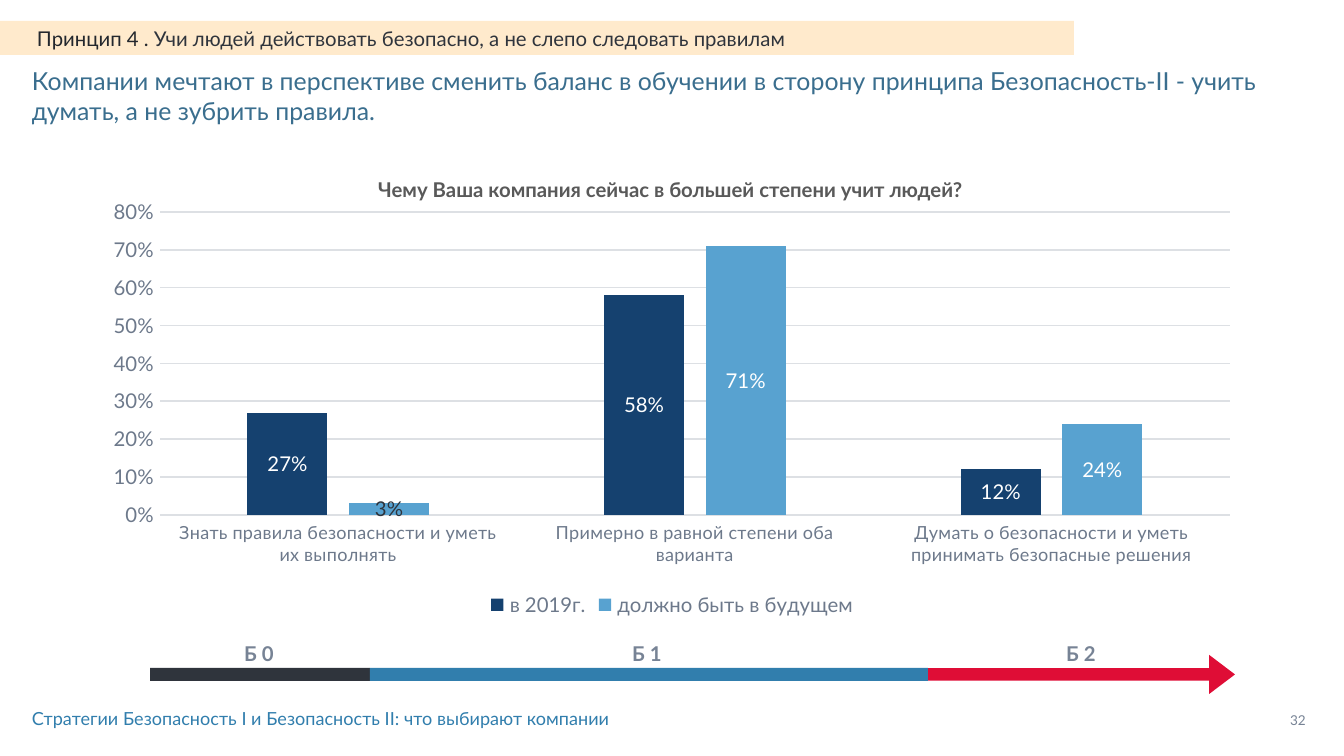
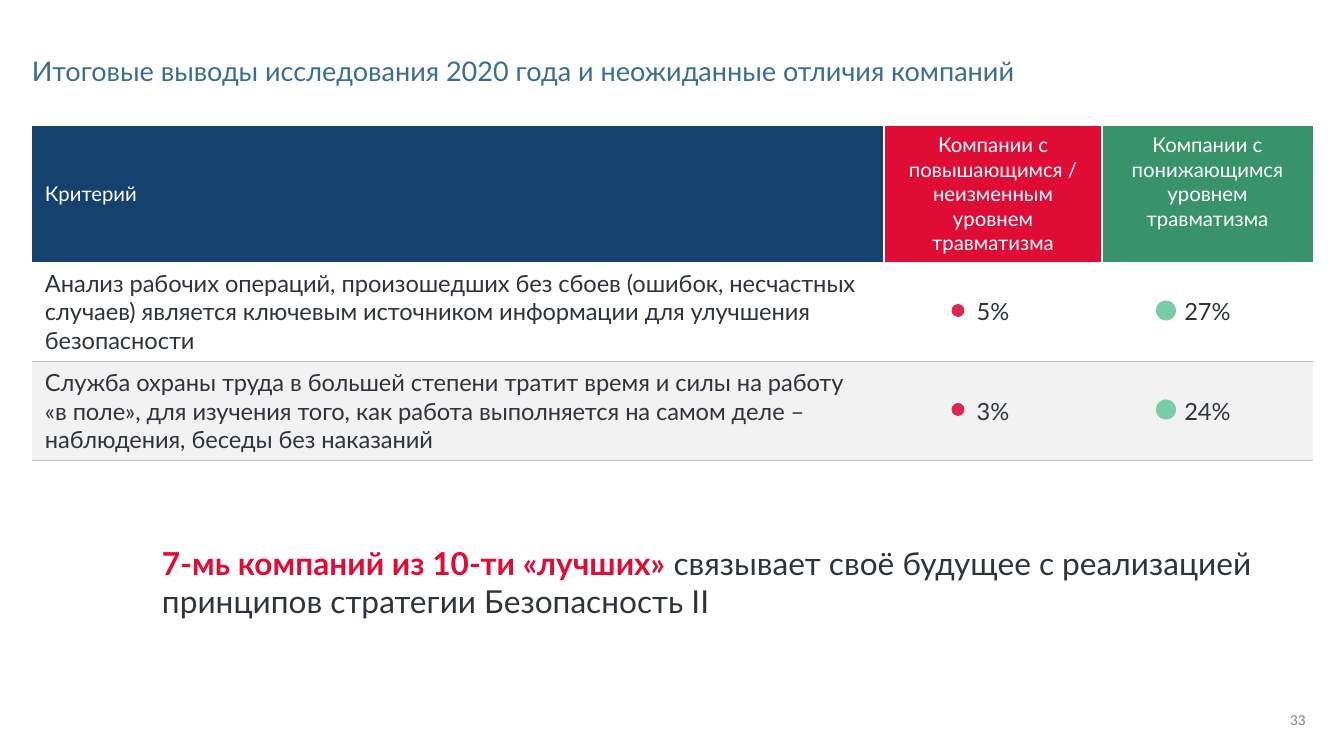
"""Build two slides on how companies teach and practise safety."""
from lxml.etree import SubElement
from pptx import Presentation
from pptx.chart.data import CategoryChartData
from pptx.dml.color import RGBColor
from pptx.enum.chart import XL_CHART_TYPE as ChartType, XL_LABEL_POSITION as LabelPosition
from pptx.enum.chart import XL_LEGEND_POSITION as LegendPosition, XL_TICK_MARK as TickMark
from pptx.enum.shapes import MSO_SHAPE as Shape
from pptx.enum.text import MSO_ANCHOR as Anchor, MSO_AUTO_SIZE as AutoSize, PP_ALIGN as Align
from pptx.oxml.ns import qn
from pptx.util import Emu, Pt

FONT = "Lato"
EMU_PER_PX = 914400 / 162.5
SLIDE_SIZE = (1344, 756)
TITLE_ONLY = 5
NO_TABLE_STYLE = "{2D5ABB26-0587-4C30-8999-92F81FD0307C}"
COLORS = {
    "title": "3A6E8E", "text": "2F343C", "strip_text": "23272D", "strip": "FFEACC",
    "muted": "778395", "axis": "6D798B", "grid": "DDE0E4", "chart_title": "595959",
    "navy": "15416F", "sky": "58A2D0", "blue": "317EAD", "red": "DF0D36",
    "green": "38936A", "red_dot": "D8294F", "green_dot": "7ACCA7",
    "white": "FFFFFF", "band": "F2F2F2", "rule": "BFBFBF",
}
PADDING = (16, 8, 16, 8)
NUMBER_BOX = (1272, 712, 52, 16)

BALANCE = {
    "number": "32",
    "title": "Компании мечтают в перспективе сменить баланс в обучении в сторону принципа "
             "Безопасность-II - учить думать, а не зубрить правила.",
    "title_box": (32, 58, 1280, 74),
    "title_size": 11,
}
STRIP_RUNS = [("Принцип 4 . ", "strip_text", False),
              ("Учи людей действовать безопасно, а не слепо следовать правилам", "text", False)]
STRIP_BOX = (0, 21, 1074, 34)
FOOTER = "Стратегии Безопасность I и Безопасность II: что выбирают компании"
FOOTER_BOX = (16, 699, 777, 39)
CHART_TITLE = "Чему Ваша компания сейчас в большей степени учит людей?"
CHART_TITLE_BOX = (294, 169, 752, 39)
CHART_BOX = (91, 190, 1162, 434)
PLOT_BOX = (160, 212, 1070, 303)
CATEGORIES = ["Знать правила безопасности и уметь их выполнять",
              "Примерно в равной степени оба варианта",
              "Думать о безопасности и уметь принимать безопасные решения"]
SERIES = [("в 2019г.", "navy", (0.27, 0.58, 0.12)),
          ("должно быть в будущем", "sky", (0.03, 0.71, 0.24))]
DARK_LABEL = (1, 0)
STAGES = [("Б 0", 259), ("Б 1", 647), ("Б 2", 1081)]
STAGE_LABEL = (634, 190, 39)
STAGE_BARS = [("text", 150, 370), ("blue", 370, 928)]
BAR_TOP, BAR_HEIGHT = 668, 13
ARROW_BOX = (928, 655, 307, 39)
ARROW_SHAPE = (0.32, 0.66)

FINDINGS = {
    "number": "33",
    "title": "Итоговые выводы исследования 2020 года и неожиданные отличия компаний",
    "title_box": (32, 46, 1240, 46),
    "title_size": 12,
}
TABLE_ORIGIN = (32, 126)
COLUMN_WIDTHS = (852, 218, 211)
ROW_HEIGHTS = (135, 99, 99)
CELL_PADDING = (13, 7, 13, 7)
HEADERS = [
    (["Критерий"], "navy", Anchor.MIDDLE),
    (["Компании с повышающимся / неизменным уровнем травматизма"], "red", Anchor.TOP),
    (["Компании с", "понижающимся уровнем травматизма"], "green", Anchor.TOP),
]
CRITERIA = [
    ("Анализ рабочих операций, произошедших без сбоев (ошибок, несчастных случаев) "
     "является ключевым источником информации для улучшения безопасности", "5%", "27%"),
    ("Служба охраны труда в большей степени тратит время и силы на работу «в поле», "
     "для изучения того, как работа выполняется на самом деле – наблюдения, "
     "беседы без наказаний", "3%", "24%"),
]
ROW_FILLS = ("white", "band")
DOTS = [("red_dot", 958, 13), ("green_dot", 1166, 20)]
CONCLUSION_RUNS = [
    ("7-мь компаний из 10-ти «лучших» ", "red", True),
    ("связывает своё будущее с реализацией принципов стратегии Безопасность II", "text", False)]
CONCLUSION_BOX = (156, 544, 1107, 94)


def px(length):
    return Emu(round(length * EMU_PER_PX))


def place(box):
    return [px(length) for length in box]


def rgb(name):
    return RGBColor.from_string(COLORS[name])


def style_font(font, size, color, bold=False):
    font.name, font.size, font.bold = FONT, Pt(size), bold
    font.color.rgb = rgb(color)


def set_margins(target, padding):
    (target.margin_left, target.margin_top,
     target.margin_right, target.margin_bottom) = place(padding)


def write(frame, paragraphs, size, align=Align.LEFT):
    for index, runs in enumerate(paragraphs):
        paragraph = frame.add_paragraph() if index else frame.paragraphs[0]
        paragraph.alignment = align
        for text, color, bold in runs:
            run = paragraph.add_run()
            run.text = text
            style_font(run.font, size, color, bold)


def fill_frame(frame, runs, size, align=Align.LEFT, anchor=Anchor.TOP, padding=PADDING):
    frame.word_wrap = True
    frame.auto_size = AutoSize.NONE
    frame.vertical_anchor = anchor
    set_margins(frame, padding)
    write(frame, [runs], size, align)


def add_text(shapes, box, runs, size, **layout):
    fill_frame(shapes.add_textbox(*place(box)).text_frame, runs, size, **layout)


def add_block(shapes, kind, box, color):
    shape = shapes.add_shape(kind, *place(box))
    shape.shadow.inherit = False
    shape.fill.solid()
    shape.fill.fore_color.rgb = rgb(color)
    shape.line.fill.background()
    return shape


def add_slide(presentation, content):
    slide = presentation.slides.add_slide(presentation.slide_layouts[TITLE_ONLY])
    title = slide.shapes.title
    title.left, title.top, title.width, title.height = place(content["title_box"])
    fill_frame(title.text_frame, [(content["title"], "title", False)],
               content["title_size"], padding=(0, 8, 16, 8))
    add_text(slide.shapes, NUMBER_BOX, [(content["number"], "muted", False)], 6,
             align=Align.CENTER, anchor=Anchor.MIDDLE, padding=(0, 0, 0, 0))
    return slide


def fix_plot_area(chart):
    plot_area = chart.element.find(".//" + qn("c:plotArea"))
    old_layout = plot_area.find(qn("c:layout"))
    if old_layout is not None:
        plot_area.remove(old_layout)
    layout = plot_area.makeelement(qn("c:layout"), {})
    plot_area.insert(0, layout)
    manual = SubElement(layout, qn("c:manualLayout"))
    left, top, width, height = CHART_BOX
    plot_left, plot_top, plot_width, plot_height = PLOT_BOX
    settings = [("layoutTarget", "inner"), ("xMode", "edge"), ("yMode", "edge"),
                ("x", (plot_left - left) / width), ("y", (plot_top - top) / height),
                ("w", plot_width / width), ("h", plot_height / height)]
    for name, value in settings:
        SubElement(manual, qn("c:" + name)).set("val", str(value))


def style_axes(chart):
    for axis, size in ((chart.category_axis, 8), (chart.value_axis, 9)):
        axis.major_tick_mark = axis.minor_tick_mark = TickMark.NONE
        style_font(axis.tick_labels.font, size, "axis")
    values = chart.value_axis
    values.minimum_scale, values.maximum_scale, values.major_unit = 0, 0.8, 0.1
    values.tick_labels.number_format = "0%"
    values.tick_labels.number_format_is_linked = False
    values.has_major_gridlines = True
    for line in (chart.category_axis.format.line, values.major_gridlines.format.line):
        line.color.rgb = rgb("grid")
        line.width = Pt(0.75)
    values.format.line.fill.background()


def add_balance_chart(slide):
    data = CategoryChartData(number_format="0%")
    data.categories = CATEGORIES
    for name, _, values in SERIES:
        data.add_series(name, values)
    chart = slide.shapes.add_chart(
        ChartType.COLUMN_CLUSTERED, *place(CHART_BOX), data).chart
    style_font(chart.font, 10, "text")
    chart.has_title = False
    chart.has_legend = True
    chart.legend.position = LegendPosition.BOTTOM
    chart.legend.include_in_layout = False
    style_font(chart.legend.font, 9, "axis")
    style_axes(chart)
    fix_plot_area(chart)
    plot = chart.plots[0]
    plot.gap_width, plot.overlap, plot.vary_by_categories = 219, -27, False
    for series, (_, color, _) in zip(plot.series, SERIES):
        series.format.fill.solid()
        series.format.fill.fore_color.rgb = rgb(color)
        labels = series.data_labels
        labels.show_value = True
        labels.position = LabelPosition.CENTER
        labels.number_format = "0%"
        labels.number_format_is_linked = False
        style_font(labels.font, 9, "white")
    series_index, point_index = DARK_LABEL
    label = plot.series[series_index].points[point_index].data_label
    style_font(label.font, 9, "text")
    label.position = LabelPosition.CENTER


def add_stage_arrow(slide):
    shapes = slide.shapes.add_group_shape().shapes
    top, width, height = STAGE_LABEL
    for name, center in STAGES:
        add_text(shapes, (center - width / 2, top, width, height), [(name, "muted", True)], 9,
                 align=Align.CENTER, anchor=Anchor.MIDDLE, padding=(8, 8, 8, 8))
    arrow = add_block(shapes, Shape.RIGHT_ARROW, ARROW_BOX, "red")
    for index, value in enumerate(ARROW_SHAPE):
        arrow.adjustments[index] = value
    for color, left, right in STAGE_BARS:
        add_block(shapes, Shape.RECTANGLE, (left, BAR_TOP, right - left, BAR_HEIGHT), color)


def build_balance(presentation):
    slide = add_slide(presentation, BALANCE)
    add_balance_chart(slide)
    add_stage_arrow(slide)
    strip = add_block(slide.shapes, Shape.RECTANGLE, STRIP_BOX, "strip")
    fill_frame(strip.text_frame, STRIP_RUNS, 9, anchor=Anchor.MIDDLE, padding=(37, 0, 16, 0))
    add_text(slide.shapes, FOOTER_BOX, [(FOOTER, "blue", False)], 8, anchor=Anchor.MIDDLE)
    add_text(slide.shapes, CHART_TITLE_BOX, [(CHART_TITLE, "chart_title", True)], 9,
             align=Align.CENTER)


def fill_cell(cell, lines, size, color, fill, align, anchor, borders):
    properties = cell._tc.get_or_add_tcPr()
    for side, border_color, width in borders:
        line = SubElement(properties, qn("a:ln" + side), w=str(Pt(width)))
        paint = SubElement(line, qn("a:solidFill"))
        SubElement(paint, qn("a:srgbClr"), val=COLORS[border_color])
    cell.fill.solid()
    cell.fill.fore_color.rgb = rgb(fill)
    cell.vertical_anchor = anchor
    set_margins(cell, CELL_PADDING)
    write(cell.text_frame, [[(line, color, False)] for line in lines], size, align)


def add_findings_table(slide):
    box = (*TABLE_ORIGIN, sum(COLUMN_WIDTHS), sum(ROW_HEIGHTS))
    frame = slide.shapes.add_table(len(ROW_HEIGHTS), len(COLUMN_WIDTHS), *place(box))
    frame.element.find(".//" + qn("a:tableStyleId")).text = NO_TABLE_STYLE
    table = frame.table
    table.first_row = table.horz_banding = False
    for column, width in zip(table.columns, COLUMN_WIDTHS):
        column.width = px(width)
    for row, height in zip(table.rows, ROW_HEIGHTS):
        row.height = px(height)
    aligns = (Align.LEFT, Align.CENTER, Align.CENTER)
    sides = ("R", "LR", "L")
    for index, (lines, fill, anchor) in enumerate(HEADERS):
        borders = [(side, "white", 1) for side in sides[index]]
        fill_cell(table.cell(0, index), lines, 9, "white", fill, aligns[index], anchor, borders)
    for row, (texts, fill) in enumerate(zip(CRITERIA, ROW_FILLS), 1):
        borders = [(side, "rule", 0.5) for side in ("TB" if row > 1 else "B")]
        for index, text in enumerate(texts):
            fill_cell(table.cell(row, index), [text], 10.5, "text", fill,
                      aligns[index], Anchor.MIDDLE, borders)


def build_findings(presentation):
    slide = add_slide(presentation, FINDINGS)
    add_findings_table(slide)
    for row in range(1, len(ROW_HEIGHTS)):
        middle = TABLE_ORIGIN[1] + sum(ROW_HEIGHTS[:row]) + ROW_HEIGHTS[row] / 2
        for color, center, size in DOTS:
            add_block(slide.shapes, Shape.OVAL,
                      (center - size / 2, middle - size / 2, size, size), color)
    add_text(slide.shapes, CONCLUSION_BOX, CONCLUSION_RUNS, 14, padding=(6, 0, 6, 0))


def main():
    presentation = Presentation()
    presentation.slide_width, presentation.slide_height = place(SLIDE_SIZE)
    build_balance(presentation)
    build_findings(presentation)
    presentation.save("out.pptx")


if __name__ == "__main__":
    main()
